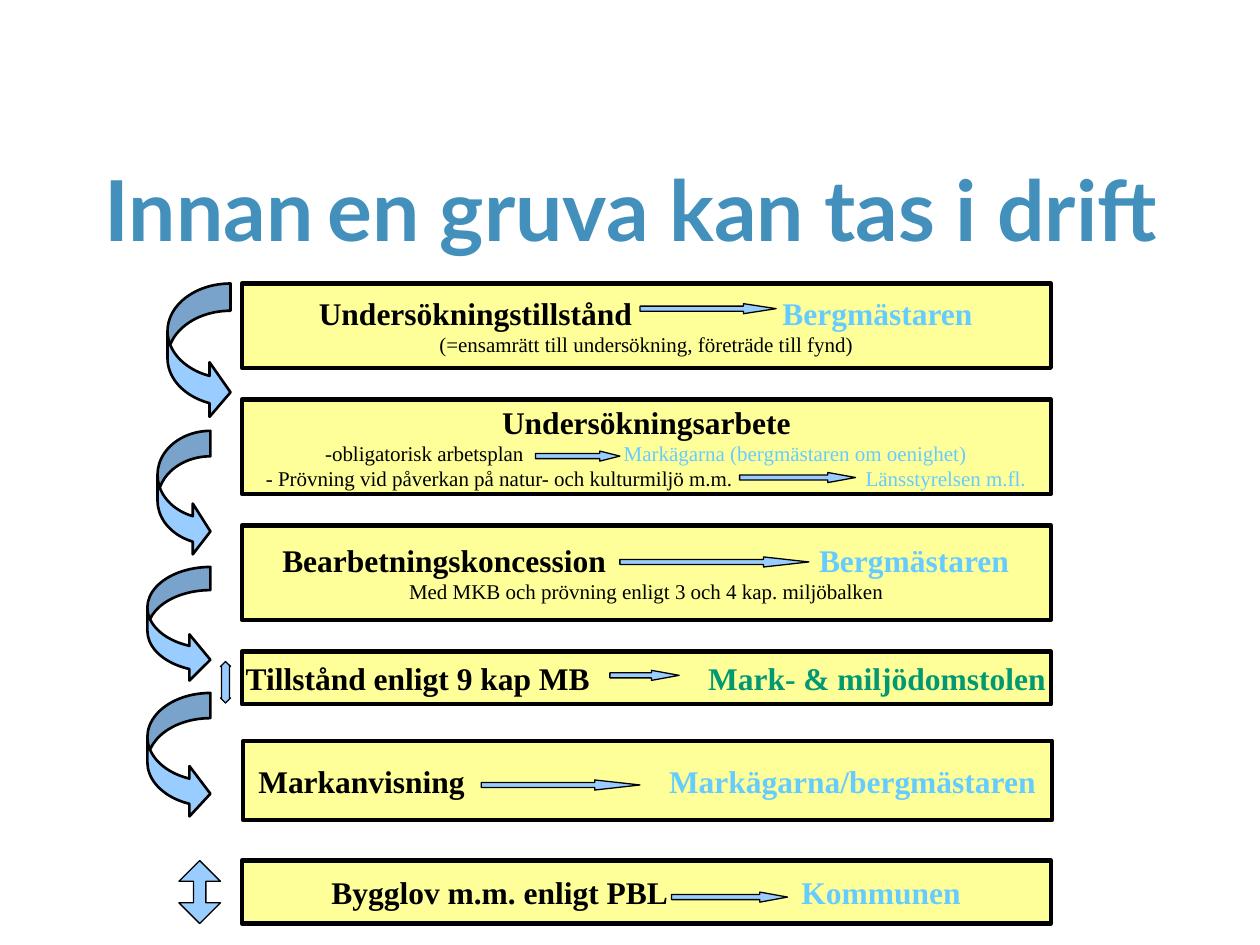
from lxml.etree import SubElement
from pptx import Presentation
from pptx.dml.color import RGBColor
from pptx.enum.shapes import MSO_SHAPE as SHAPE
from pptx.enum.text import MSO_ANCHOR as ANCHOR, MSO_AUTO_SIZE as AUTO_SIZE, PP_ALIGN as ALIGN
from pptx.oxml.ns import qn
from pptx.util import Inches, Pt

BLACK, SKY, GREEN = "000000", "66CCFF", "009973"
BOX_LEFT, BOX_WIDTH = 1.92, 6.42


def color(hex_value):
    return RGBColor.from_string(hex_value)


def add_outlined(kind, left, top, width, height, fill, line_width, adjustments=()):
    shape = slide.shapes.add_shape(
        kind, Inches(left), Inches(top), Inches(width), Inches(height))
    shape.shadow.inherit = False
    shape.fill.solid()
    shape.fill.fore_color.rgb = color(fill)
    shape.line.color.rgb = color(BLACK)
    shape.line.width = Pt(line_width)
    for index, value in enumerate(adjustments):
        shape.adjustments[index] = value
    return shape


prs = Presentation()
prs.slide_width, prs.slide_height = Inches(10), Inches(7.5)
slide = prs.slides.add_slide(prs.slide_layouts[5])

# Title
title = slide.shapes.title
title.left, title.top = Inches(0.83), Inches(1.25)
title.width, title.height = Inches(8.5), Inches(1.25)
frame = title.text_frame
frame.margin_left = frame.margin_right = frame.margin_top = frame.margin_bottom = 0
frame.vertical_anchor = ANCHOR.TOP
frame.auto_size = AUTO_SIZE.NONE
frame.word_wrap = True
heading = frame.paragraphs[0]
heading.alignment = ALIGN.LEFT
heading.font.name = "Lato"
heading.font.bold = True
heading.font.color.rgb = color("4290BB")
for text, size in (("Innan", 48), (" ", 32), ("en gruva kan tas i drift", 48)):
    run = heading.add_run()
    run.text = text
    run.font.size = Pt(size)

# Steps: left, top, height and lines of (size, parts);
# a part is (text, colour, x), where x is None on a centred line
steps = [
    (BOX_LEFT, 2.25, 0.67, [
        (18, [("Undersökningstillstånd", BLACK, 2.53), ("Bergmästaren", SKY, 6.21)]),
        (12, [("(=ensamrätt till undersökning, företräde till fynd)", BLACK, None)])]),
    (BOX_LEFT, 3.17, 0.75, [
        (18, [("Undersökningsarbete", BLACK, None)]),
        (12, [("-obligatorisk arbetsplan", BLACK, 2.58),
              ("Markägarna (bergmästaren om oenighet)", SKY, 4.95)]),
        (12, [("- Prövning vid påverkan på natur- och kulturmiljö m.m.", BLACK, 2.11),
              ("Länsstyrelsen m.fl.", SKY, 6.87)])]),
    (BOX_LEFT, 4.17, 0.75, [
        (18, [("Bearbetningskoncession", BLACK, 2.24), ("Bergmästaren", SKY, 6.5)]),
        (12, [("Med MKB och prövning enligt 3 och 4 kap. miljöbalken", BLACK, None)])]),
    (BOX_LEFT, 5.17, 0.42, [
        (18, [("Tillstånd enligt 9 kap MB", BLACK, 1.95),
              ("Mark- & miljödomstolen", GREEN, 5.62)])]),
    (1.93, 5.88, 0.63, [
        (18, [("Markanvisning", BLACK, 2.05), ("Markägarna/bergmästaren", SKY, 5.31)])]),
    (BOX_LEFT, 6.83, 0.5, [
        (18, [("Bygglov m.m. enligt PBL", BLACK, 2.63), ("Kommunen", SKY, 6.36)])]),
]
for left, top, height, lines in steps:
    step = add_outlined(SHAPE.RECTANGLE, left, top, BOX_WIDTH, height, "FFFF99", 2.5)
    frame = step.text_frame
    frame.margin_left = frame.margin_right = frame.margin_top = frame.margin_bottom = 0
    frame.vertical_anchor = ANCHOR.MIDDLE
    frame.word_wrap = True
    for number, (size, parts) in enumerate(lines):
        line = frame.add_paragraph() if number else frame.paragraphs[0]
        tabbed = parts[0][2] is not None
        line.alignment = ALIGN.LEFT if tabbed else ALIGN.CENTER
        if tabbed:
            tab_list = SubElement(line._p.get_or_add_pPr(), qn("a:tabLst"))
            for _, _, x in parts:
                SubElement(tab_list, qn("a:tab"), pos=str(Inches(x - left)), algn="l")
        line.font.name = "Times New Roman"
        line.font.size = Pt(size)
        line.font.bold = size == 18
        for text, text_color, _ in parts:
            run = line.add_run()
            run.text = "\t" + text if tabbed else text
            run.font.color.rgb = color(text_color)

# Arrows from each step to the deciding authority: left, top, width, head length
for left, top, width, head in [
    (5.08, 2.41, 1.08, 3.25),
    (4.25, 3.58, 0.67, 2),
    (5.87, 3.75, 0.92, 2.75),
    (4.92, 4.42, 1.5, 4.5),
    (4.84, 5.32, 0.55, 2.75),
    (3.82, 6.19, 1.26, 4.5),
    (5.33, 7.08, 0.92, 2.75),
]:
    add_outlined(SHAPE.RIGHT_ARROW, left, top, width, 0.08, "99CCFF", 0.75, (0.5, head))

# Curved arrows from step to step: left, top, width, height, band thickness
for left, top, width, height, band in [
    (1.33, 2.25, 0.5, 1.08, 0.433),
    (1.25, 3.42, 0.42, 1, 0.48),
    (1.17, 4.5, 0.5, 0.92, 0.367),
    (1.17, 5.5, 0.5, 1, 0.4),
]:
    add_outlined(SHAPE.CURVED_RIGHT_ARROW, left, top, width, height, "99CCFF", 1.5,
                 (band, 2 * band, 0.333))

# Two-way arrows beside the parallel steps
for left, top, width, height, head in [
    (1.42, 6.83, 0.33, 0.5, 0.3),
    (1.75, 5.25, 0.08, 0.33, 0.8),
]:
    add_outlined(SHAPE.UP_DOWN_ARROW, left, top, width, height, "99CCFF", 0.75, (0.5, head))

prs.save("out.pptx")
